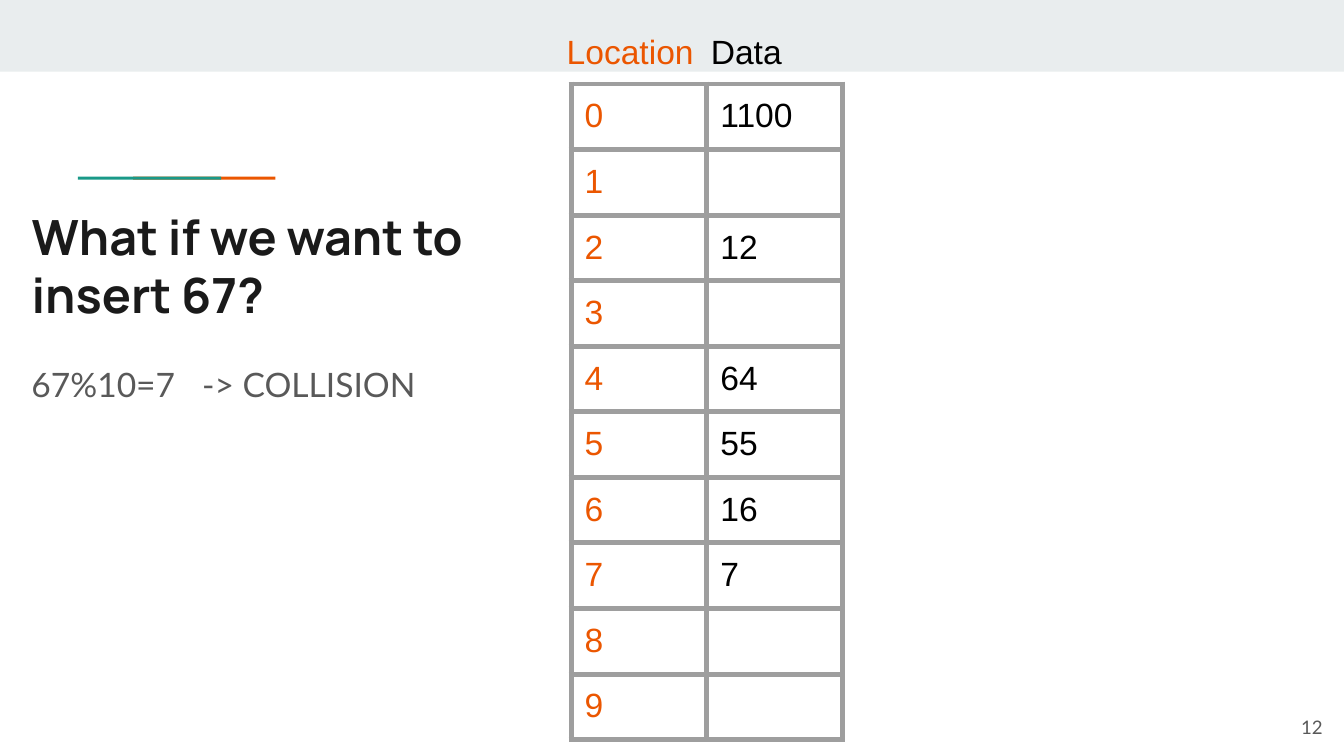
from dataclasses import dataclass

from lxml import etree
from pptx import Presentation
from pptx import util as u
from pptx.dml.color import RGBColor
from pptx.enum import shapes, text
from pptx.oxml import ns

WIDTH = u.Inches(10)
HEIGHT = WIDTH * 9 // 16
GRID_COLUMNS = 100
UNIT = WIDTH // GRID_COLUMNS
COLORS = {
    "band": "E9EDEE",
    "orange": "EB5600",
    "teal": "1A9988",
    "title": "1A1A1A",
    "gray": "595959",
    "black": "000000",
    "border": "9E9E9E",
}
STORED = {0: "1100", 2: "12", 4: "64", 5: "55", 6: "16", 7: "7"}
SLOTS = 10
COLUMN_WIDTH, ROW_HEIGHT = 10.1, 4.88
INSET = 1


def grid(count: float) -> int:
    return round(count * UNIT)


@dataclass(frozen=True)
class Box:
    column: float
    row: float
    columns: float
    rows: float

    def lengths(self) -> tuple[int, ...]:
        return tuple(map(grid, (self.column, self.row, self.columns, self.rows)))


@dataclass(frozen=True)
class Style:
    font: str
    size: float
    color: str
    bold: bool = False
    align: text.PP_ALIGN = text.PP_ALIGN.LEFT
    spacing: float = 1.0


@dataclass(frozen=True)
class Bar:
    box: Box
    color: str


@dataclass(frozen=True)
class Label:
    words: str
    box: Box
    style: Style
    anchor: text.MSO_ANCHOR = text.MSO_ANCHOR.TOP


LOCATION = Style("Arial", 18, "orange")
DATA = Style("Arial", 18, "black")
TITLE = Label(
    "What if we want to insert 67?",
    Box(1.35, 14.4, 39.6, 6.9),
    Style("Manrope", 26, "title", bold=True),
)
COLLISION = Label(
    "67%10=7\t-> COLLISION",
    Box(1.35, 25.6, 36.1, 8.5),
    Style("Lato", 18, "gray", spacing=1.15),
)
LABELS = [
    Label("Location", Box(40.9, 1.3, 11.7, 3.7),
          Style("Arial", 18, "orange", align=text.PP_ALIGN.RIGHT)),
    Label("Data", Box(51.9, 1.3, 9.9, 3.7), DATA),
    Label("12", Box(93.4, 51.95, 6, 4.3),
          Style("Lato", 10, "gray", align=text.PP_ALIGN.RIGHT), text.MSO_ANCHOR.MIDDLE),
]
BARS = [
    Bar(Box(0, 0, GRID_COLUMNS, 5.33), "band"),
    Bar(Box(9.9, 13.15, 10.6, 0.23), "orange"),
    Bar(Box(5.8, 13.15, 10.65, 0.23), "teal"),
]


def color(name: str) -> RGBColor:
    return RGBColor.from_string(COLORS[name])


def format_paragraph(paragraph, style: Style) -> None:
    paragraph.alignment = style.align
    paragraph.line_spacing = style.spacing
    paragraph.font.name = style.font
    paragraph.font.size = u.Pt(style.size)
    paragraph.font.bold = style.bold
    paragraph.font.color.rgb = color(style.color)


def draw_bar(slide, bar: Bar) -> None:
    shape = slide.shapes.add_shape(shapes.MSO_SHAPE.RECTANGLE, *bar.box.lengths())
    shape.shadow.inherit = False
    shape.fill.solid()
    shape.fill.fore_color.rgb = color(bar.color)
    shape.line.fill.background()


def fill_label(shape, label: Label) -> None:
    shape.left, shape.top, shape.width, shape.height = label.box.lengths()
    frame = shape.text_frame
    frame.text = label.words
    frame.word_wrap = True
    frame.auto_size = text.MSO_AUTO_SIZE.NONE
    frame.vertical_anchor = label.anchor
    frame.margin_left = frame.margin_right = grid(INSET)
    frame.margin_top = frame.margin_bottom = grid(INSET)
    format_paragraph(frame.paragraphs[0], label.style)


def draw_label(slide, label: Label):
    shape = slide.shapes.add_textbox(*label.box.lengths())
    fill_label(shape, label)
    return shape


def add_tab_stop(paragraph, position: float) -> None:
    tabs = etree.Element(ns.qn("a:tabLst"))
    etree.SubElement(tabs, ns.qn("a:tab"), pos=str(grid(position)), algn="l")
    paragraph.font._element.addprevious(tabs)


def draw_borders(cell, width: float) -> None:
    properties = cell._tc.get_or_add_tcPr()
    for index, side in enumerate(("lnL", "lnR", "lnT", "lnB")):
        line = etree.Element(ns.qn(f"a:{side}"), w=str(u.Pt(width)))
        fill = etree.SubElement(line, ns.qn("a:solidFill"))
        etree.SubElement(fill, ns.qn("a:srgbClr"), val=COLORS["border"])
        properties.insert(index, line)


def fill_cell(cell, words: str, style: Style) -> None:
    cell.text = words
    cell.margin_left = cell.margin_right = grid(INSET)
    cell.margin_top = cell.margin_bottom = grid(INSET)
    cell.fill.background()
    format_paragraph(cell.text_frame.paragraphs[0], style)
    draw_borders(cell, 3)


def draw_hash_table(slide) -> None:
    box = Box(42.5, 6.25, 2 * COLUMN_WIDTH, SLOTS * ROW_HEIGHT)
    table = slide.shapes.add_table(SLOTS, 2, *box.lengths()).table
    table.first_row = table.horz_banding = False
    for column in table.columns:
        column.width = grid(COLUMN_WIDTH)
    for slot, row in enumerate(table.rows):
        row.height = grid(ROW_HEIGHT)
        fill_cell(row.cells[0], str(slot), LOCATION)
        fill_cell(row.cells[1], STORED.get(slot, ""), DATA)


def main() -> None:
    presentation = Presentation()
    presentation.slide_width = WIDTH
    presentation.slide_height = HEIGHT
    slide = presentation.slides.add_slide(presentation.slide_layouts[5])
    for bar in BARS:
        draw_bar(slide, bar)
    fill_label(slide.shapes.title, TITLE)
    for label in LABELS:
        draw_label(slide, label)
    draw_hash_table(slide)
    collision = draw_label(slide, COLLISION)
    add_tab_stop(collision.text_frame.paragraphs[0], 12.7)
    presentation.save("out.pptx")


if __name__ == "__main__":
    main()
